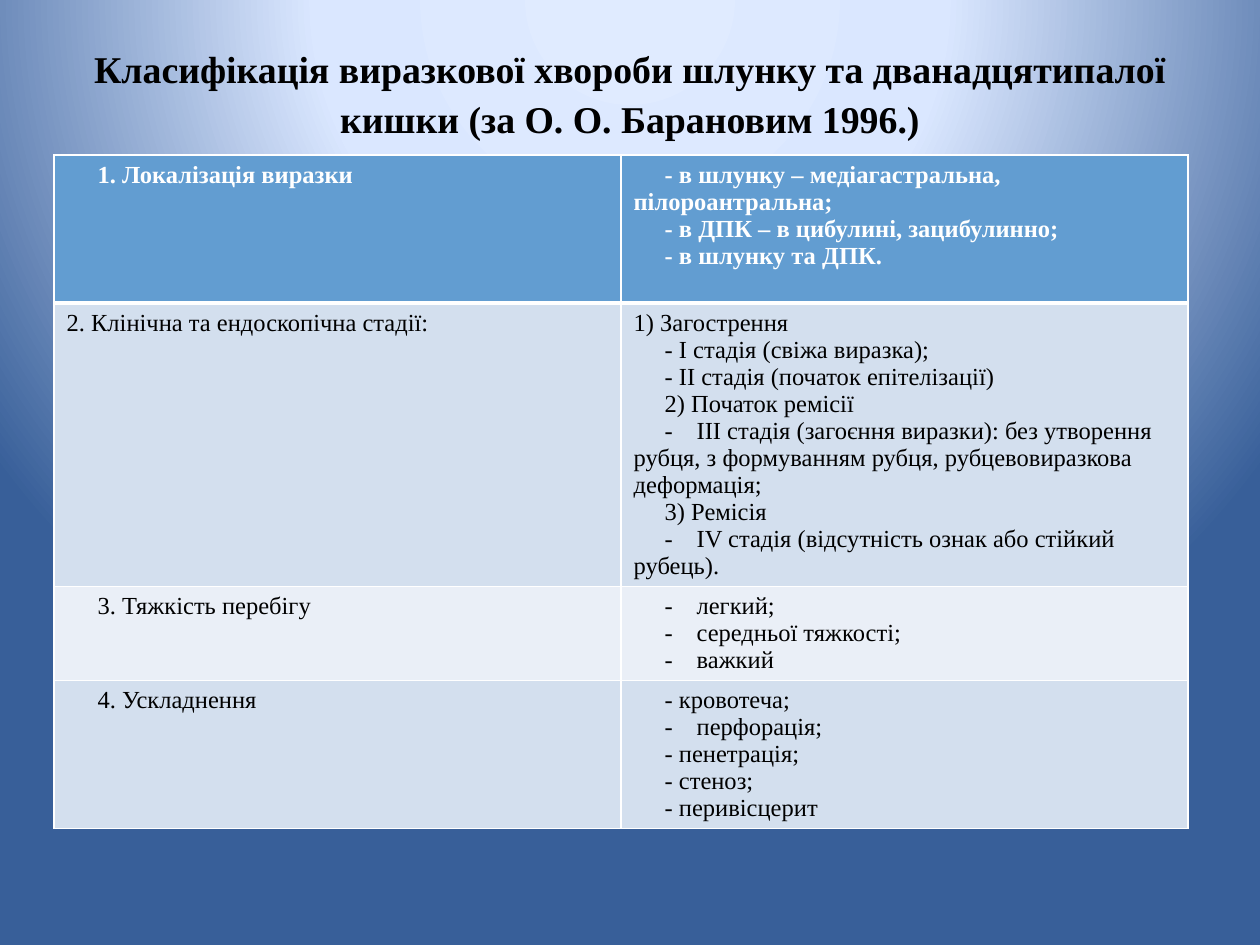
from pptx import Presentation
from pptx.dml.color import RGBColor
from pptx.enum.text import MSO_ANCHOR, PP_ALIGN
from pptx.oxml import parse_xml
from pptx.oxml.ns import nsdecls, qn
from pptx.util import Pt

PX = 914400 / 126
FONT = "Times New Roman"


def px(n):
    return round(n * PX)


def style(para, size, color, bold):
    font = para.font
    font.name = FONT
    font.size = Pt(size)
    font.bold = bold
    font.color.rgb = RGBColor.from_string(color)


deck = Presentation()
deck.slide_width = px(1260)
deck.slide_height = px(945)
slide = deck.slides.add_slide(deck.slide_layouts[5])

stops = "".join(
    f'<a:gs pos="{pos * 1000}"><a:srgbClr val="{color}"/></a:gs>'
    for pos, color in [(0, "E0EBFF"), (40, "DAE7FF"), (100, "385F99")]
)
back = parse_xml(
    f'<p:bg {nsdecls("p", "a")}><p:bgPr><a:gradFill rotWithShape="1">'
    f'<a:gsLst>{stops}</a:gsLst><a:path path="circle">'
    '<a:fillToRect l="50000" t="-80000" r="50000" b="180000"/></a:path>'
    '</a:gradFill><a:effectLst/></p:bgPr></p:bg>'
)
slide.element.find(qn("p:cSld")).insert(0, back)

title = slide.shapes.title
title.left, title.top, title.width, title.height = map(px, (63, 38, 1134, 107))
frame = title.text_frame
frame.word_wrap = True
frame.vertical_anchor = MSO_ANCHOR.MIDDLE
para = frame.paragraphs[0]
para.text = "Класифiкацiя виразкової хвороби шлунку та дванадцятипалої кишки (за О. О. Барановим 1996.)"
para.alignment = PP_ALIGN.CENTER
para.line_spacing = 1.1
style(para, 21.6, "000000", True)

# Each line is (indent, tab stop, text).
rows = [
    (148, "629DD1", [(31, 0, "1. Локалiзацiя виразки")], [
        (31, 0, "- в шлунку – медiагастральна, пiлороантральна;"),
        (31, 0, "- в ДПК – в цибулинi, зацибулинно;"),
        (31, 0, "- в шлунку та ДПК."),
    ]),
    (283, "D3DFEE", [(0, 0, "2. Клiнiчна та ендоскопiчна стадiї:")], [
        (0, 0, "1) Загострення"),
        (31, 0, "- I стадiя (свiжа виразка);"),
        (31, 0, "- II стадiя (початок епiтелiзацiї)"),
        (31, 0, "2) Початок ремiсiї"),
        (31, 76, "-\tIII стадiя (загоєння виразки): без утворення рубця, "
                 "з формуванням рубця, рубцевовиразкова деформацiя;"),
        (31, 0, "3) Ремiсiя"),
        (31, 51, "-\tIV стадiя (вiдсутнiсть ознак або стiйкий рубець)."),
    ]),
    (94, "EAEFF7", [(31, 0, "3. Тяжкiсть перебiгу")], [
        (31, 94, "-\tлегкий;"),
        (31, 94, "-\tсередньої тяжкостi;"),
        (31, 94, "-\tважкий"),
    ]),
    (148, "D3DFEE", [(31, 0, "4. Ускладнення")], [
        (31, 0, "- кровотеча;"),
        (31, 51, "-\tперфорацiя;"),
        (31, 0, "- пенетрацiя;"),
        (31, 0, "- стеноз;"),
        (31, 0, "- перивiсцерит"),
    ]),
]

table = slide.shapes.add_table(
    len(rows), 2, px(54), px(155), px(1134), px(sum(row[0] for row in rows))
).table
for col in table.columns:
    col.width = px(567)

for r, (height, fill, *cells) in enumerate(rows):
    table.rows[r].height = px(height)
    for c, lines in enumerate(cells):
        cell = table.cell(r, c)
        cell.fill.solid()
        cell.fill.fore_color.rgb = RGBColor.from_string(fill)
        props = cell._tc.get_or_add_tcPr()
        for n, side in enumerate("LRTB"):
            wide = (r, side) in [(0, "B"), (1, "T")]
            props.insert(n, parse_xml(
                f'<a:ln{side} {nsdecls("a")} w="{Pt(3 if wide else 1)}"><a:solidFill>'
                f'<a:srgbClr val="FFFFFF"/></a:solidFill></a:ln{side}>'
            ))
        frame = cell.text_frame
        for n, (indent, tab, text) in enumerate(lines):
            para = frame.add_paragraph() if n else frame.paragraphs[0]
            para.text = text
            style(para, 14, "000000" if r else "FFFFFF", r == 0)
            form = para._p.get_or_add_pPr()
            form.set("marL", "0")
            form.set("indent", str(px(indent)))
            if tab:
                form.insert(0, parse_xml(
                    f'<a:tabLst {nsdecls("a")}><a:tab pos="{px(tab)}" algn="l"/></a:tabLst>'
                ))

deck.save("out.pptx")
